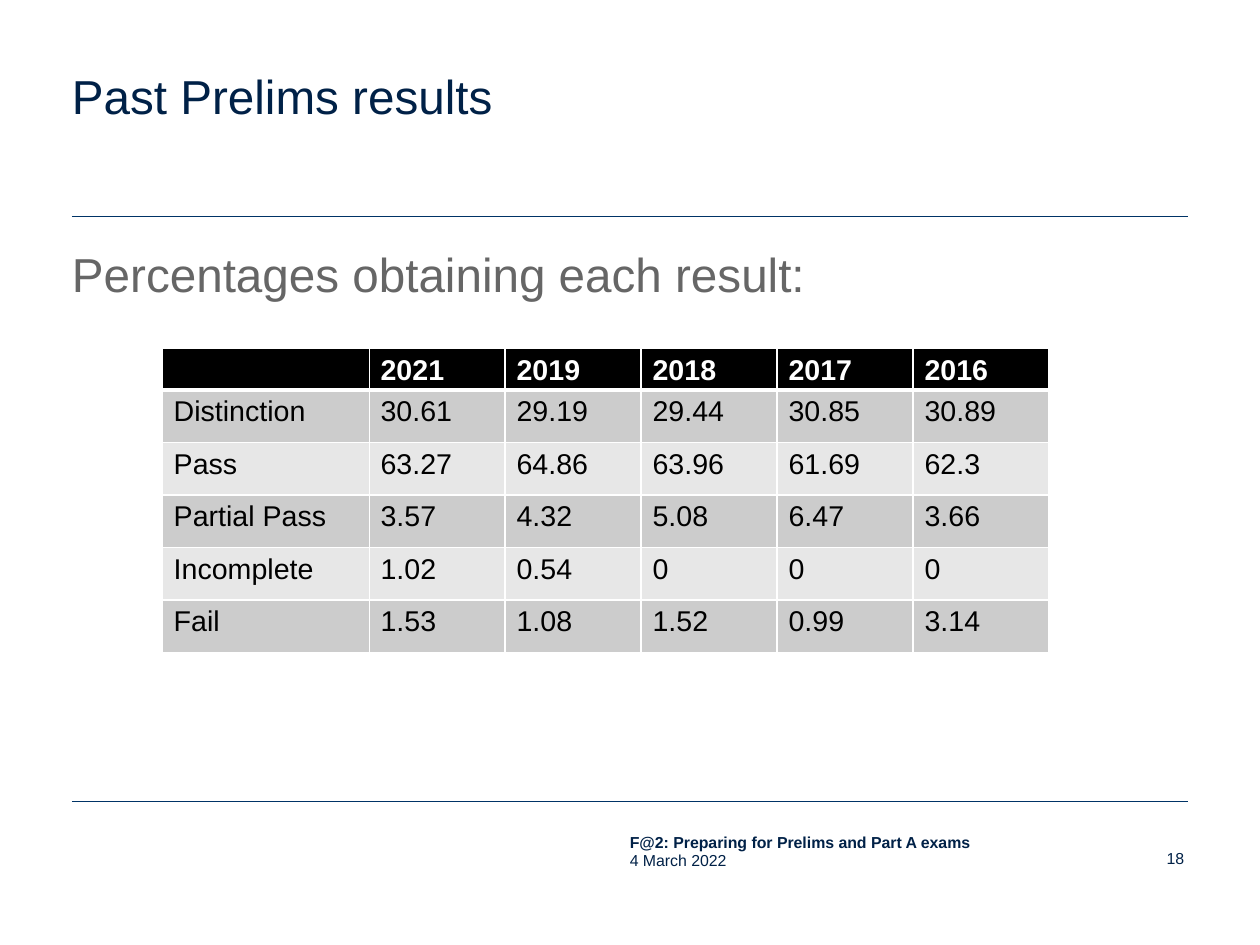
"""Build the slide of past Prelims results with its table of percentages."""
from lxml.etree import SubElement
from pptx import Presentation
from pptx.dml.color import RGBColor
from pptx.enum.shapes import MSO_CONNECTOR
from pptx.enum.text import MSO_ANCHOR, MSO_AUTO_SIZE, PP_ALIGN
from pptx.oxml import parse_xml
from pptx.oxml.ns import nsdecls, qn
from pptx.util import Inches, Pt

NAVY, GREY, WHITE, BLACK = "002147", "666666", "FFFFFF", "000000"
RULE_BLUE, DARK_BAND, LIGHT_BAND = "003366", "CCCCCC", "E7E7E7"
CM_PER_INCH = 2.54


def color(value):
    """Turn a hex string into a colour."""
    return RGBColor.from_string(value)


def style_text(text_frame, size, hex_color, bold=False):
    """Format every paragraph and run of a text frame."""
    for paragraph in text_frame.paragraphs:
        paragraph.line_spacing = 0.93
        paragraph.space_before = Pt(0)
        for run in paragraph.runs:
            run.font.name = "Arial"
            run.font.size = Pt(size)
            run.font.bold = bold
            run.font.color.rgb = color(hex_color)


presentation = Presentation()
presentation.slide_width = Inches(28 / CM_PER_INCH)
presentation.slide_height = Inches(21 / CM_PER_INCH)
slide = presentation.slides.add_slide(presentation.slide_layouts[1])

for rule_top in (1.89, 7.01):
    rule = slide.shapes.add_connector(
        MSO_CONNECTOR.STRAIGHT, Inches(0.63), Inches(rule_top), Inches(10.39), Inches(rule_top))
    rule.line.color.rgb = color(RULE_BLUE)
    rule.line.width = Pt(0.5)
    SubElement(rule.element.spPr, qn("a:effectLst"))

title, body = slide.shapes.title, slide.placeholders[1]
footer = slide.shapes.add_textbox(0, 0, 0, 0)
number = slide.shapes.add_textbox(0, 0, 0, 0)
text_blocks = [
    (title, (0.63, 0.63, 8.15, 1.1), 0, "Past Prelims results", 30, NAVY),
    (body, (0.63, 2.16, 9.76, 4.56), 0.03, "Percentages obtaining each result:", 30, GREY),
    (footer, (5.51, 7.29, 3.39, 0.41), 0.01,
     "F@2: Preparing for Prelims and Part A exams\n4 March 2022", 10, NAVY),
    (number, (9.65, 7.44, 0.71, 0.43), 0, "18", 10, NAVY),
]
for shape, bounds, top_margin, text, size, hex_color in text_blocks:
    shape.left, shape.top, shape.width, shape.height = map(Inches, bounds)
    text_frame = shape.text_frame
    text_frame.text = text
    text_frame.word_wrap = True
    text_frame.auto_size = MSO_AUTO_SIZE.NONE
    text_frame.vertical_anchor = MSO_ANCHOR.TOP
    text_frame.margin_left = text_frame.margin_right = text_frame.margin_bottom = 0
    text_frame.margin_top = Inches(top_margin)
    style_text(text_frame, size, hex_color)
    text_frame.paragraphs[0].alignment = PP_ALIGN.LEFT

footer.text_frame.paragraphs[0].runs[0].font.bold = True
number.text_frame.paragraphs[0].alignment = PP_ALIGN.RIGHT

body_paragraph = body.text_frame.paragraphs[0]
body_paragraph.space_after = Pt(14.1)
body_properties = body_paragraph._p.get_or_add_pPr()
body_properties.set("marL", "0")
body_properties.set("indent", "0")
SubElement(body_properties, qn("a:buNone"))

results = [
    ["", "2021", "2019", "2018", "2017", "2016"],
    ["Distinction", "30.61", "29.19", "29.44", "30.85", "30.89"],
    ["Pass", "63.27", "64.86", "63.96", "61.69", "62.3"],
    ["Partial Pass", "3.57", "4.32", "5.08", "6.47", "3.66"],
    ["Incomplete", "1.02", "0.54", "0", "0", "0"],
    ["Fail", "1.53", "1.08", "1.52", "0.99", "3.14"],
]
table = slide.shapes.add_table(
    len(results), len(results[0]), Inches(1.42), Inches(3.05), Inches(7.77), Inches(2.71)).table
for index, column in enumerate(table.columns):
    column.width = Inches(1.19 if index else 1.81)

for row_index, values in enumerate(results):
    is_header = row_index == 0
    table.rows[row_index].height = Inches(0.34 if is_header else 0.46)
    band = BLACK if is_header else DARK_BAND if row_index % 2 else LIGHT_BAND
    for column_index, value in enumerate(values):
        cell = table.cell(row_index, column_index)
        cell.text = value
        cell.margin_top, cell.margin_bottom = Inches(0.07), Inches(0.03)
        style_text(cell.text_frame, 18, WHITE if is_header else BLACK, bold=is_header)
        if not value:
            SubElement(cell.text_frame.paragraphs[0]._p, qn("a:endParaRPr"), sz="1000")
        cell_properties = cell._tc.get_or_add_tcPr()
        for side in ("L", "R", "T", "B"):
            thick = (side == "B" and is_header) or (side == "T" and row_index == 1)
            cell_properties.append(parse_xml(
                f'<a:ln{side} {nsdecls("a")} w="{Pt(3 if thick else 1)}">'
                f'<a:solidFill><a:srgbClr val="{WHITE}"/></a:solidFill></a:ln{side}>'))
        cell.fill.solid()
        cell.fill.fore_color.rgb = color(band)

presentation.save("out.pptx")
